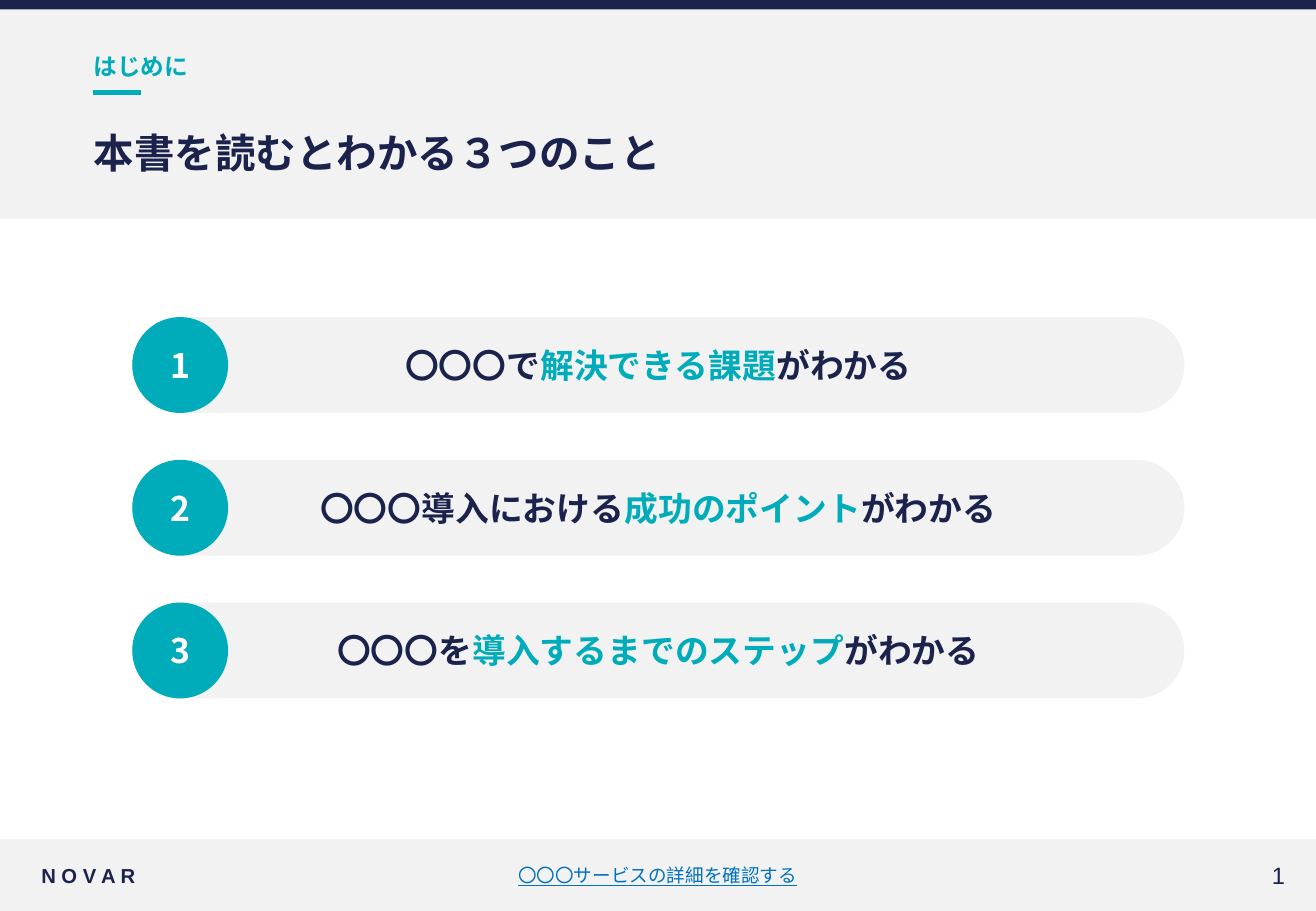
from dataclasses import dataclass

from lxml.etree import SubElement
from pptx import Presentation
from pptx.dml.color import RGBColor
from pptx.enum.shapes import MSO_CONNECTOR, MSO_SHAPE
from pptx.enum.text import MSO_ANCHOR as ANCHOR, MSO_AUTO_SIZE, PP_ALIGN as ALIGN
from pptx.oxml.ns import qn
from pptx.util import Pt

NAVY = RGBColor(0x1B, 0x22, 0x4C)
TEAL = RGBColor(0x00, 0xAC, 0xBA)
GRAY = RGBColor(0xF2, 0xF2, 0xF2)
BLUE = RGBColor(0x00, 0x70, 0xC0)
WHITE = RGBColor(0xFF, 0xFF, 0xFF)
NOTO = "Noto Sans CJK JP"
ARIAL = "Arial"
WIDTH, HEIGHT = 780, 540
INSET = 2.88
BAR_LEFT, BAR_TOP, BAR_WIDTH, BAR_HEIGHT, BAR_PITCH = 78.4, 188, 623.6, 56.8, 84.6


@dataclass(frozen=True)
class Box:
    left: float
    top: float
    width: float
    height: float

    def lengths(self) -> list[Pt]:
        return [Pt(v) for v in (self.left, self.top, self.width, self.height)]


@dataclass(frozen=True)
class Band:
    box: Box
    color: RGBColor


@dataclass(frozen=True)
class Footer:
    text: str
    box: Box
    size: float
    align: ALIGN
    color: RGBColor = NAVY
    bold: bool = False
    underline: bool = False
    wrap: bool = False


@dataclass(frozen=True)
class Lesson:
    lead: str
    key: str
    tail: str = "がわかる"


BANDS = [
    Band(Box(0, 497.5, WIDTH, 42.5), GRAY),
    Band(Box(0, 0, WIDTH, 129.6), GRAY),
    Band(Box(0, 0, WIDTH, 5.6), NAVY),
]
FOOTERS = [
    Footer("N O V A R", Box(21.6, 507.6, 77, 22.3), 12, ALIGN.LEFT, bold=True),
    Footer("〇〇〇サービスの詳細を確認する", Box(237.6, 507.6, 304.6, 22.3), 11,
           ALIGN.CENTER, color=BLUE, underline=True, wrap=True),
    Footer("1", Box(687.6, 507.6, 77, 22.3), 14, ALIGN.RIGHT),
]
LESSONS = [
    Lesson("〇〇〇で", "解決できる課題"),
    Lesson("〇〇〇導入における", "成功のポイント"),
    Lesson("〇〇〇を", "導入するまでのステップ"),
]


def add_text(sp, text: str, *, size: float, color: RGBColor, font: str = NOTO,
             bold: bool = False, underline: bool = False, align: ALIGN = ALIGN.LEFT,
             anchor: ANCHOR = ANCHOR.MIDDLE, wrap: bool = True) -> None:
    tf = sp.text_frame
    tf.auto_size = MSO_AUTO_SIZE.NONE
    tf.word_wrap = wrap
    tf.vertical_anchor = anchor
    tf.margin_left = tf.margin_top = tf.margin_right = tf.margin_bottom = Pt(INSET)
    p = tf.paragraphs[0]
    p.alignment = align
    r = p.add_run()
    r.text = text
    r.font.name = font
    r.font.size = Pt(size)
    r.font.bold = bold
    r.font.underline = underline
    r.font.color.rgb = color
    SubElement(r.font._element, qn("a:ea")).set("typeface", NOTO)


def add_filled(slide, kind: MSO_SHAPE, box: Box, color: RGBColor):
    sp = slide.shapes.add_shape(kind, *box.lengths())
    sp.shadow.inherit = False
    sp.fill.solid()
    sp.fill.fore_color.rgb = color
    sp.line.fill.background()
    return sp


def add_rule(slide, left: float, right: float, y: float) -> None:
    line = slide.shapes.add_connector(MSO_CONNECTOR.STRAIGHT, Pt(left), Pt(y), Pt(right), Pt(y))
    line.line.color.rgb = TEAL
    line.line.width = Pt(2.5)
    SubElement(line._element.spPr, qn("a:effectLst"))


def place_heading(slide, sp, box: Box):
    sp.left, sp.top, sp.width, sp.height = box.lengths()
    slide.shapes._spTree.append(sp._element)
    p = sp.text_frame.paragraphs[0]
    p.line_spacing = 0.9
    p.space_before = Pt(0)
    return sp


def add_headings(slide) -> None:
    body = place_heading(slide, slide.placeholders[1], Box(52.6, 29.5, 674.6, 20.2))
    add_text(body, "はじめに", size=14, color=TEAL, bold=True, anchor=ANCHOR.TOP)
    pPr = body.text_frame.paragraphs[0]._p.get_or_add_pPr()
    pPr.set("marL", "0")
    pPr.set("indent", "0")
    SubElement(pPr, qn("a:buNone"))
    title = place_heading(slide, slide.shapes.title, Box(52.6, 70.6, 674.6, 42.5))
    add_text(title, "本書を読むとわかる３つのこと", size=24, color=NAVY, bold=True)


def add_footer(slide, footer: Footer) -> None:
    sp = slide.shapes.add_textbox(*footer.box.lengths())
    add_text(sp, footer.text, size=footer.size, color=footer.color, font=ARIAL,
             bold=footer.bold, underline=footer.underline, align=footer.align,
             wrap=footer.wrap)


def add_lesson(slide, index: int, lesson: Lesson) -> None:
    top = BAR_TOP + index * BAR_PITCH
    bar = add_filled(slide, MSO_SHAPE.ROUNDED_RECTANGLE,
                     Box(BAR_LEFT, top, BAR_WIDTH, BAR_HEIGHT), GRAY)
    bar.adjustments[0] = 0.5
    for text, color in ((lesson.lead, NAVY), (lesson.key, TEAL), (lesson.tail, NAVY)):
        add_text(bar, text, size=20, color=color, font=ARIAL, bold=True, align=ALIGN.CENTER)
    badge = add_filled(slide, MSO_SHAPE.OVAL, Box(BAR_LEFT, top, BAR_HEIGHT, BAR_HEIGHT), TEAL)
    add_text(badge, str(index + 1), size=20, color=WHITE, bold=True, align=ALIGN.CENTER)


def main() -> None:
    prs = Presentation()
    prs.slide_width, prs.slide_height = Pt(WIDTH), Pt(HEIGHT)
    slide = prs.slides.add_slide(prs.slide_layouts[1])
    for band in BANDS:
        add_filled(slide, MSO_SHAPE.RECTANGLE, band.box, band.color)
    add_rule(slide, 55, 83.5, 54.9)
    for footer in FOOTERS:
        add_footer(slide, footer)
    add_headings(slide)
    for index, lesson in enumerate(LESSONS):
        add_lesson(slide, index, lesson)
    prs.save("out.pptx")


if __name__ == "__main__":
    main()
